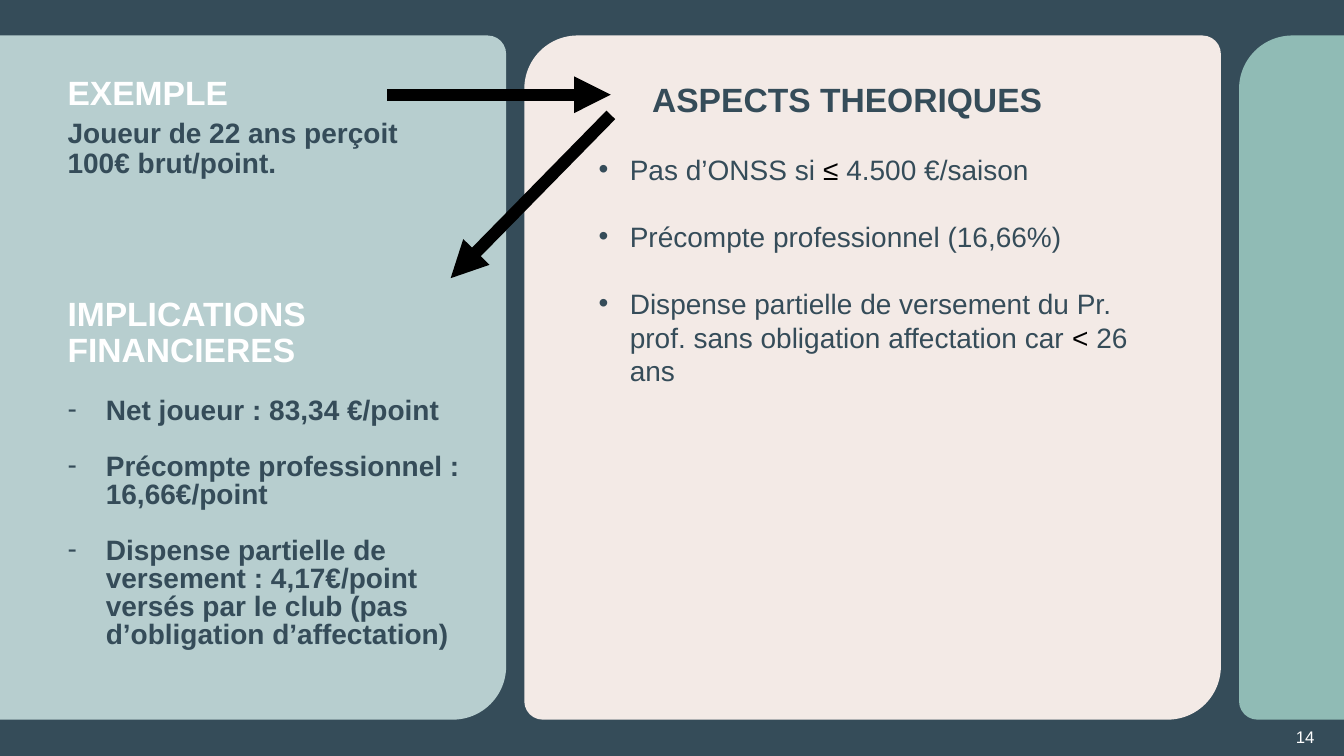
"""Build the slide linking a player's pay example to its theory and financial effects."""
from pptx import Presentation
from pptx.dml.color import RGBColor
from pptx.enum.shapes import MSO_CONNECTOR as CONN, MSO_SHAPE as SHAPE
from pptx.enum.text import MSO_ANCHOR as ANCHOR, PP_ALIGN as ALIGN
from pptx.oxml.ns import qn
from pptx.util import Inches, Pt
from lxml.etree import SubElement

DARK, WHITE, BLACK = "354C59", "FFFFFF", "000000"
HEAD = {"size": Pt(24), "bold": True}
BODY = {"size": Pt(20), "bold": False}
STRONG = {"size": Pt(20), "bold": True}
SMALL = {"size": Pt(12), "bold": False}

prs = Presentation()
prs.slide_width, prs.slide_height = Inches(13.333), Inches(7.5)
s = prs.slides.add_slide(prs.slide_layouts[6])


def rgb(color):
    return RGBColor.from_string(color)


def grid(*shares):
    sides = (prs.slide_width, prs.slide_height)
    return [int(sides[i % 2] * share / 100) for i, share in enumerate(shares)]


s.background.fill.solid()
s.background.fill.fore_color.rgb = rgb(DARK)

PANEL_W, PITCH = 51.83, 53.18
for i, color in enumerate(["B7CECF", "90BBB5", "F3EAE6"]):
    column = (-1, 1, 0)[i]
    sp = s.shapes.add_shape(SHAPE.ROUND_2_DIAG_RECTANGLE,
                            *grid(39.01 + column * PITCH, 4.7, PANEL_W, 90.5))
    sp.adjustments[0], sp.adjustments[1] = 0.078, 0.027
    sp.shadow.inherit = False
    sp.fill.solid()
    sp.fill.fore_color.rgb = rgb(color)
    sp.line.fill.background()

heading = {"line_spacing": 0.9}
dashed = {"line_spacing": Pt(20), "space_before": Pt(20)}
spaced = {"space_before": Pt(24)}
texts = [
    ((91.65, 96.13, 6.15, 2.67), 0, [
        ("", {"alignment": ALIGN.RIGHT}, SMALL, [("14", WHITE)])]),
    ((5.03, 10.13, 28.58, 5.33), 0, [
        ("", heading, HEAD, [("EXEMPLE", WHITE)])]),
    ((5.03, 39.33, 32.48, 52.67), 0, [
        ("", heading, HEAD, [("IMPLICATIONS FINANCIERES", WHITE)]),
        ("-", dashed, STRONG, [("Net joueur : 83,34 €/point", DARK)]),
        ("-", dashed, STRONG, [("Précompte professionnel : 16,66€/point", DARK)]),
        ("-", dashed, STRONG, [("Dispense partielle de versement : 4,17€/point versés "
                                "par le club (pas d’obligation d’affectation)", DARK)])]),
    ((5.03, 15.73, 28.58, 18.53), 0, [
        ("", heading, STRONG, [("Joueur de 22 ans perçoit 100€ brut/point.", DARK)])]),
    ((47.78, 9.73, 41.85, 6.67), 0.1, [
        ("", {}, HEAD, [("ASPECTS THEORIQUES", DARK)])]),
    ((43.8, 19.47, 44.4, 32.8), 0.1, [
        ("•", {}, BODY, [("Pas d’ONSS si ", DARK), ("≤", BLACK),
                         (" 4.500 €/saison", DARK)]),
        ("•", spaced, BODY, [("Précompte professionnel (16,66%)", DARK)]),
        ("•", spaced, BODY, [("Dispense partielle de versement du Pr. prof. sans "
                              "obligation affectation car ", DARK),
                             ("<", BLACK), (" 26 ans", DARK)])]),
]
INDENT = {"-": Inches(0.38), "•": Inches(0.31)}

for place, inset, paragraphs in texts:
    tf = s.shapes.add_textbox(*grid(*place)).text_frame
    tf.word_wrap = True
    tf.margin_left = tf.margin_right = Inches(inset)
    tf.margin_top = tf.margin_bottom = Inches(inset / 2)
    tf.vertical_anchor = ANCHOR.MIDDLE if paragraphs[0][2] is SMALL else ANCHOR.TOP
    for i, (bullet, layout, style, runs) in enumerate(paragraphs):
        p = tf.add_paragraph() if i else tf.paragraphs[0]
        for key, value in layout.items():
            setattr(p, key, value)
        if bullet:
            pPr = p._p.get_or_add_pPr()
            pPr.set("marL", str(INDENT[bullet]))
            pPr.set("indent", str(-INDENT[bullet]))
            SubElement(pPr, qn("a:buFont"), typeface="Arial")
            SubElement(pPr, qn("a:buChar"), char=bullet)
        for text, color in runs:
            r = p.add_run()
            r.text = text
            r.font.name = "Arial"
            r.font.color.rgb = rgb(color)
            for key, value in style.items():
                setattr(r.font, key, value)

for ends in [(45.45, 15.2, 33.53, 36.8), (28.8, 12.53, 45.45, 12.53)]:
    arrow = s.shapes.add_connector(CONN.STRAIGHT, *grid(*ends))
    arrow.line.width = Pt(8.75)
    arrow.line.color.rgb = rgb(BLACK)
    SubElement(arrow.line._get_or_add_ln(), qn("a:tailEnd"), type="triangle")
    SubElement(arrow._element.spPr, qn("a:effectLst"))

prs.save("out.pptx")
